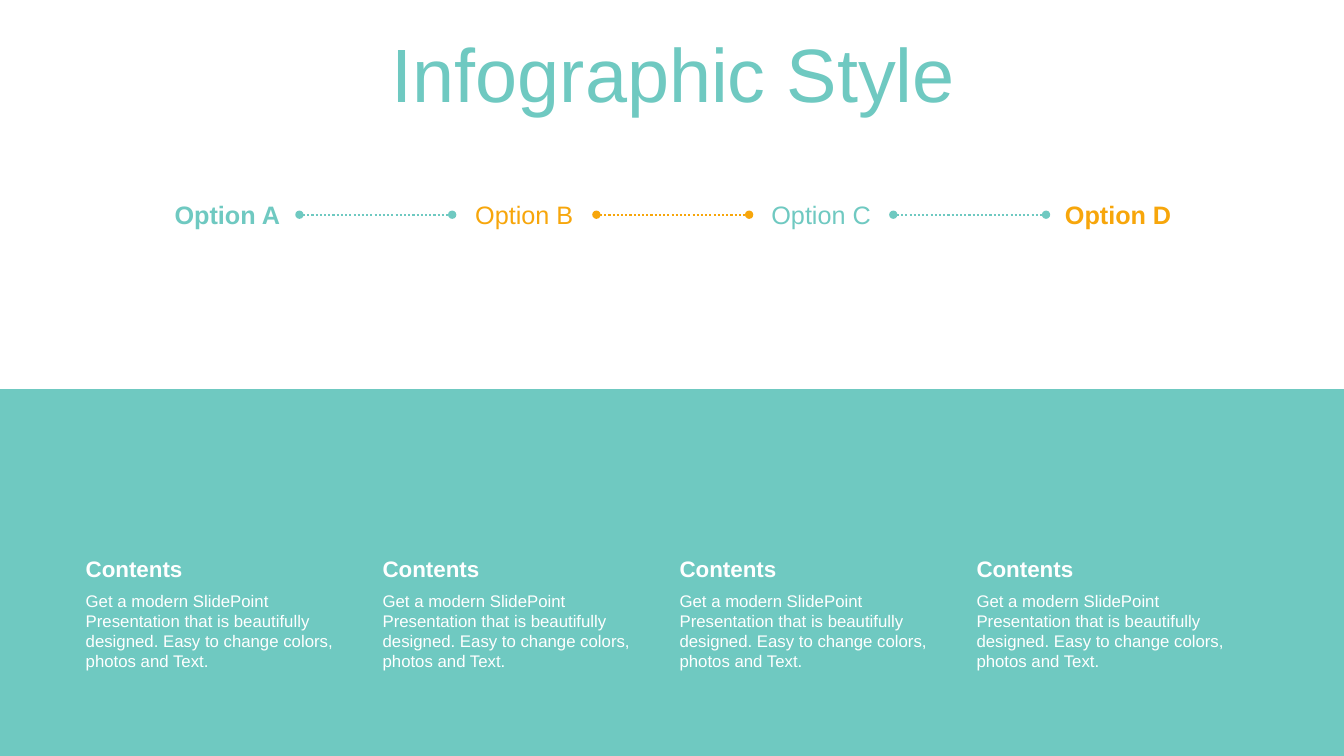
from lxml import etree
from pptx import Presentation
from pptx.dml.color import RGBColor
from pptx.enum.dml import MSO_LINE
from pptx.enum.shapes import MSO_CONNECTOR, MSO_SHAPE
from pptx.enum.text import MSO_ANCHOR, PP_ALIGN
from pptx.oxml.ns import qn
from pptx.util import Inches, Pt

LEFT, CENTER = PP_ALIGN.LEFT, PP_ALIGN.CENTER
MIDDLE = MSO_ANCHOR.MIDDLE
DOTTED = MSO_LINE.ROUND_DOT  # written as sysDot
STRAIGHT = MSO_CONNECTOR.STRAIGHT
RECTANGLE = MSO_SHAPE.RECTANGLE

# Content
FONT = "Arial"
COLORS = {"teal": "6FC9C1", "orange": "F7A60B", "white": "FFFFFF"}
TITLE = "Infographic Style"
OPTIONS = [  # label, color, bold
    ("Option A", "teal", True),
    ("Option B", "orange", False),
    ("Option C", "teal", False),
    ("Option D", "orange", True),
]
BODY = ("Get a modern SlidePoint Presentation that is beautifully designed. "
        "Easy to change colors, photos and Text.")
CONTENTS = [("Contents", BODY)] * 4

# Layout, in inches
WIDTH, HEIGHT = 13.33, 7.5
BAND_TOP = 3.86
COLUMN_STEP = 2.945
CONTENT_LEFT, CONTENT_WIDTH = 0.85, 2.65
OPTION_LEFT, OPTION_TOP, OPTION_WIDTH, OPTION_HEIGHT = 1.54, 1.98, 1.43, 0.3


def rgb(color):
    return RGBColor.from_string(COLORS[color])


def style_text(frame, text, size, color, bold=False, align=LEFT):
    frame.word_wrap = True
    frame.text = text
    para = frame.paragraphs[0]
    para.alignment = align
    font = para.runs[0].font
    font.name, font.size, font.bold = FONT, Pt(size), bold
    font.color.rgb = rgb(color)
    return para


def add_text(page, left, top, width, height, *style):
    box = page.shapes.add_textbox(Inches(left), Inches(top), Inches(width), Inches(height))
    frame = box.text_frame
    frame.margin_left = frame.margin_right = frame.margin_top = frame.margin_bottom = 0
    style_text(frame, *style)


def add_dotted_link(page, start, end, y, color):
    link = page.shapes.add_connector(STRAIGHT, Inches(start), Inches(y), Inches(end), Inches(y))
    link.line.color.rgb = rgb(color)
    link.line.width = Pt(1.5)
    link.line.dash_style = DOTTED
    line = link.line._get_or_add_ln()
    for tag in ("a:headEnd", "a:tailEnd"):
        etree.SubElement(line, qn(tag)).set("type", "oval")
    etree.SubElement(link._element.spPr, qn("a:effectLst"))


def main():
    deck = Presentation()
    deck.slide_width, deck.slide_height = Inches(WIDTH), Inches(HEIGHT)
    page = deck.slides.add_slide(deck.slide_layouts[5])

    # Lower band
    band = page.shapes.add_shape(RECTANGLE, 0, Inches(BAND_TOP), Inches(WIDTH),
                                 Inches(HEIGHT - BAND_TOP))
    band.shadow.inherit = False
    band.fill.solid()
    band.fill.fore_color.rgb = rgb("teal")
    band.line.fill.background()

    # Title
    title = page.shapes.title
    title.left, title.top = Inches(0.35), Inches(0.31)
    title.width, title.height = Inches(12.66), Inches(0.92)
    title.text_frame.vertical_anchor = MIDDLE
    para = style_text(title.text_frame, TITLE, 54, "teal", False, CENTER)
    para.line_spacing = 0.9
    para.space_before = Pt(10)

    # Content columns
    for column, (heading, body) in enumerate(CONTENTS):
        left = CONTENT_LEFT + column * COLUMN_STEP
        add_text(page, left, 5.51, CONTENT_WIDTH, 0.27, heading, 16, "white", True)
        add_text(page, left, 5.86, CONTENT_WIDTH, 0.81, body, 12, "white")

    # Options, each joined to the next
    for column, (label, color, bold) in enumerate(OPTIONS):
        left = OPTION_LEFT + column * COLUMN_STEP
        add_text(page, left, OPTION_TOP, OPTION_WIDTH, OPTION_HEIGHT,
                 label, 18, color, bold, CENTER)
        if column < len(OPTIONS) - 1:
            add_dotted_link(page, left + OPTION_WIDTH, left + COLUMN_STEP,
                            OPTION_TOP + OPTION_HEIGHT / 2, color)

    deck.save("out.pptx")


if __name__ == "__main__":
    main()
